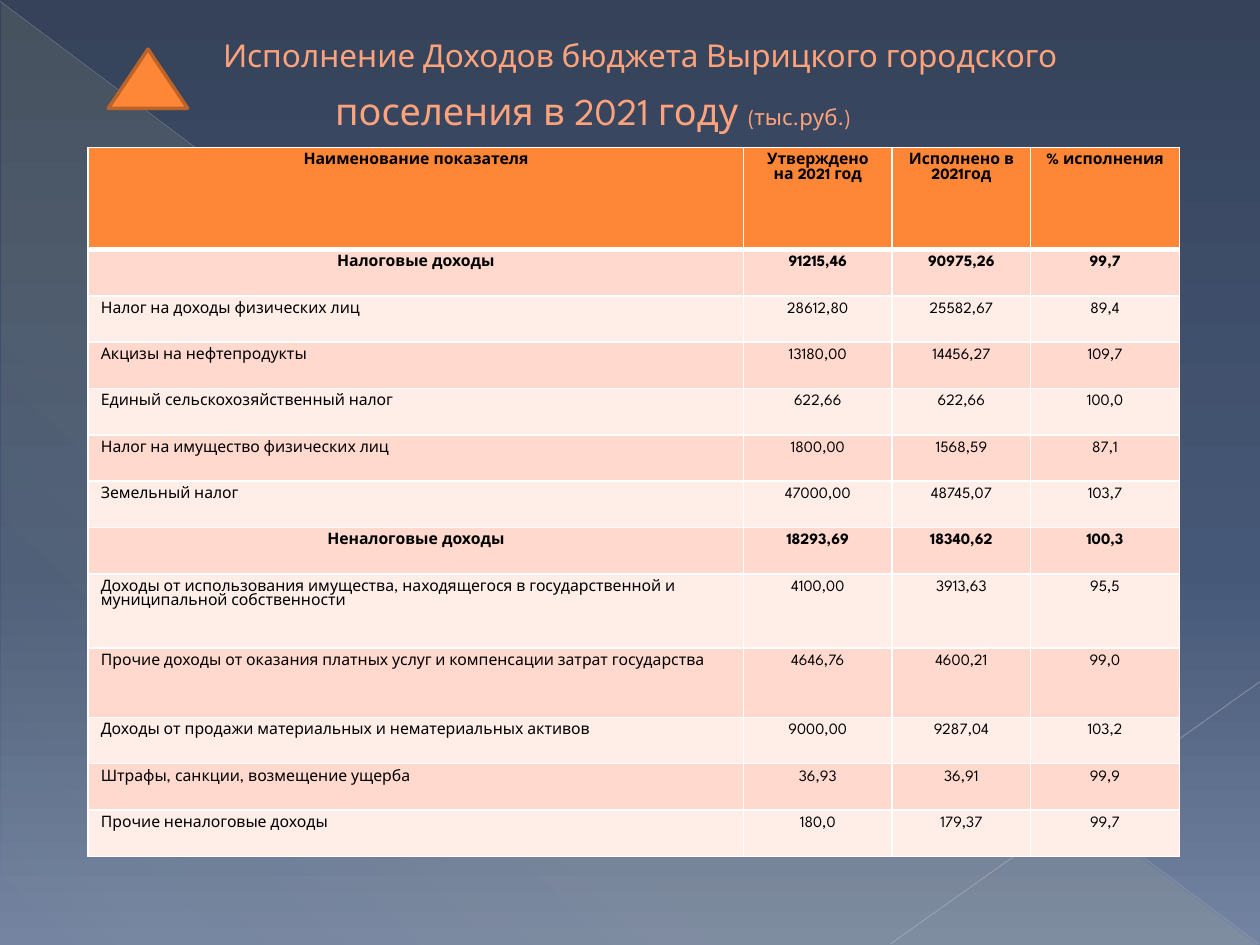
from dataclasses import dataclass

from lxml.etree import SubElement
from pptx import Presentation
from pptx.dml.color import RGBColor
from pptx.enum.shapes import MSO_CONNECTOR, MSO_SHAPE
from pptx.enum.text import MSO_ANCHOR, MSO_AUTO_SIZE, PP_ALIGN
from pptx.oxml.ns import qn
from pptx.util import Inches, Pt


@dataclass(frozen=True)
class Theme:
    font: str = "League Spartan"
    title: str = "FFA37C"
    text: str = "000000"
    accent: str = "FE8637"
    accent_edge: str = "BC6329"
    bands: tuple = ("FFD9CE", "FFEDE8")
    border: str = "FFFFFF"
    glow: str = "FFF39D"
    sky: tuple = ((0, "35425A", 100), (60, "465877", 100), (100, "7383A2", 100))
    title_size: float = 18
    title_large: float = 21.6
    title_small: float = 12.6
    table_size: float = 9


THEME = Theme()
HEADER = ("Наименование показателя", "Утверждено на 2021 год", "Исполнено в 2021год", "% исполнения")
INCOME = (
    ("Налоговые доходы", "91215,46", "90975,26", "99,7"),
    ("Налог на доходы физических лиц", "28612,80", "25582,67", "89,4"),
    ("Акцизы на нефтепродукты", "13180,00", "14456,27", "109,7"),
    ("Единый сельскохозяйственный налог", "622,66", "622,66", "100,0"),
    ("Налог на имущество физических лиц", "1800,00", "1568,59", "87,1"),
    ("Земельный налог", "47000,00", "48745,07", "103,7"),
    ("Неналоговые доходы", "18293,69", "18340,62", "100,3"),
    ("Доходы от использования имущества, находящегося в государственной и муниципальной собственности",
     "4100,00", "3913,63", "95,5"),
    ("Прочие доходы от оказания платных услуг и компенсации затрат государства",
     "4646,76", "4600,21", "99,0"),
    ("Доходы от продажи материальных и нематериальных активов", "9000,00", "9287,04", "103,2"),
    ("Штрафы, санкции, возмещение ущерба", "36,93", "36,91", "99,9"),
    ("Прочие неналоговые доходы", "180,0", "179,37", "99,7"),
)
SUBTOTALS = ("Налоговые доходы", "Неналоговые доходы")
COLUMN_WIDTHS = (5.2, 1.18, 1.1, 1.18)
TABLE_HEIGHT = 5.63
SPECIAL_ROWS = {0: 0.81, 8: 0.59, 9: 0.55}


def color(code):
    return RGBColor.from_string(code)


def add_color(parent, code, opacity=100):
    element = SubElement(parent, qn("a:srgbClr"), val=code)
    if opacity < 100:
        SubElement(element, qn("a:alpha"), val=str(opacity * 1000))


def apply_gradient(holder, stops, angle):
    solid = holder.find(qn("a:solidFill"))
    gradient = SubElement(holder, qn("a:gradFill"), rotWithShape="1")
    stop_list = SubElement(gradient, qn("a:gsLst"))
    for position, code, opacity in stops:
        stop = SubElement(stop_list, qn("a:gs"), pos=str(position * 1000))
        add_color(stop, code, opacity)
    SubElement(gradient, qn("a:lin"), ang=str(angle * 60000), scaled="0")
    holder.replace(solid, gradient)


def add_background(page):
    page.background.fill.solid()
    apply_gradient(page.element.xpath("p:cSld/p:bg/p:bgPr")[0], THEME.sky, 90)


def add_triangle(page, kind, left, top, width, height):
    shape = page.shapes.add_shape(kind, Inches(left), Inches(top), Inches(width), Inches(height))
    shape.shadow.inherit = False
    shape.fill.solid()
    shape.fill.fore_color.rgb = color(THEME.accent)
    return shape


def add_glow(page):
    shape = add_triangle(page, MSO_SHAPE.RIGHT_TRIANGLE, 0.01, 0.02, 9.98, 7.48)
    shape.line.fill.background()
    stops = ((0, THEME.glow, 10), (70, THEME.glow, 8), (100, THEME.glow, 1))
    apply_gradient(shape.element.spPr, stops, 133)


def add_marker(page):
    shape = add_triangle(page, MSO_SHAPE.ISOSCELES_TRIANGLE, 0.86, 0.39, 0.63, 0.47)
    shape.line.color.rgb = color(THEME.accent_edge)
    shape.line.width = Pt(2)


def add_ray(page, start, end, code, width, opacity):
    points = [Inches(value) for value in (*start, *end)]
    ray = page.shapes.add_connector(MSO_CONNECTOR.STRAIGHT, *points)
    ray.line.width = Pt(width)
    ray.line.fill.solid()
    solid = ray.line._get_or_add_ln().find(qn("a:solidFill"))
    for child in list(solid):
        solid.remove(child)
    add_color(solid, code, opacity)
    SubElement(ray._element.spPr, qn("a:effectLst"))


def format_title_line(para, indent, size):
    para.alignment = PP_ALIGN.LEFT
    para.line_spacing = 1.0
    para.space_before = Pt(0)
    para._p.get_or_add_pPr().set("marL", str(Inches(indent)))
    para._p.get_or_add_pPr().set("indent", "0")
    para.font.name = THEME.font
    para.font.size = Pt(size)
    para.font.color.rgb = color(THEME.title)


def add_title(page):
    box = page.shapes.title
    page.shapes._spTree.append(box._element)
    box.left, box.top, box.width, box.height = (Inches(value) for value in (0.62, 0.23, 9, 0.7))
    frame = box.text_frame
    frame.word_wrap = True
    frame.auto_size = MSO_AUTO_SIZE.NONE
    frame.vertical_anchor = MSO_ANCHOR.MIDDLE
    frame.margin_top = Inches(0.23)
    first = frame.paragraphs[0]
    first.add_run().text = "Исполнение Доходов бюджета Вырицкого городского"
    format_title_line(first, 1.05, THEME.title_size)
    first.space_after = Pt(7.7)
    second = frame.add_paragraph()
    second.add_run().text = "поселения в 2021 году "
    span = second.add_run()
    span.text = "(тыс.руб.)"
    span.font.size = Pt(THEME.title_small)
    format_title_line(second, 1.94, THEME.title_large)


def set_borders(cell, is_header):
    properties = cell._tc.get_or_add_tcPr()
    for side in ("lnL", "lnR", "lnT", "lnB"):
        width = 3 if is_header and side == "lnB" else 1
        line = SubElement(properties, qn(f"a:{side}"), w=str(Pt(width)))
        add_color(SubElement(line, qn("a:solidFill")), THEME.border)


def fill_cell(cell, text, fill, bold, centered, is_header):
    set_borders(cell, is_header)
    cell.fill.solid()
    cell.fill.fore_color.rgb = color(fill)
    cell.text = text
    para = cell.text_frame.paragraphs[0]
    para.alignment = PP_ALIGN.CENTER if centered else PP_ALIGN.LEFT
    para.font.name = THEME.font
    para.font.size = Pt(THEME.table_size)
    para.font.bold = bold
    para.font.color.rgb = color(THEME.text)


def add_income_table(page):
    rows = (HEADER, *INCOME)
    table = page.shapes.add_table(
        len(rows), len(HEADER), Inches(0.7), Inches(1.17),
        Inches(sum(COLUMN_WIDTHS)), Inches(TABLE_HEIGHT)).table
    regular = (TABLE_HEIGHT - sum(SPECIAL_ROWS.values())) / (len(rows) - len(SPECIAL_ROWS))
    for column, width in zip(table.columns, COLUMN_WIDTHS):
        column.width = Inches(width)
    for row_index, values in enumerate(rows):
        table.rows[row_index].height = Inches(SPECIAL_ROWS.get(row_index, regular))
        is_header = row_index == 0
        bold = is_header or values[0] in SUBTOTALS
        fill = THEME.accent if is_header else THEME.bands[(row_index - 1) % 2]
        for column_index, text in enumerate(values):
            cell = table.cell(row_index, column_index)
            fill_cell(cell, text, fill, bold, bold or column_index > 0, is_header)


def main():
    deck = Presentation()
    deck.slide_width, deck.slide_height = Inches(10), Inches(7.5)
    page = deck.slides.add_slide(deck.slide_layouts[5])
    add_background(page)
    add_glow(page)
    add_ray(page, (0, 0.01), (9.99, 7.49), "BABDC4", 0.39, 35)
    add_ray(page, (10, 5.41), (7.07, 7.49), "C1C4CA", 0.47, 45)
    add_title(page)
    add_income_table(page)
    add_marker(page)
    deck.save("out.pptx")


if __name__ == "__main__":
    main()
